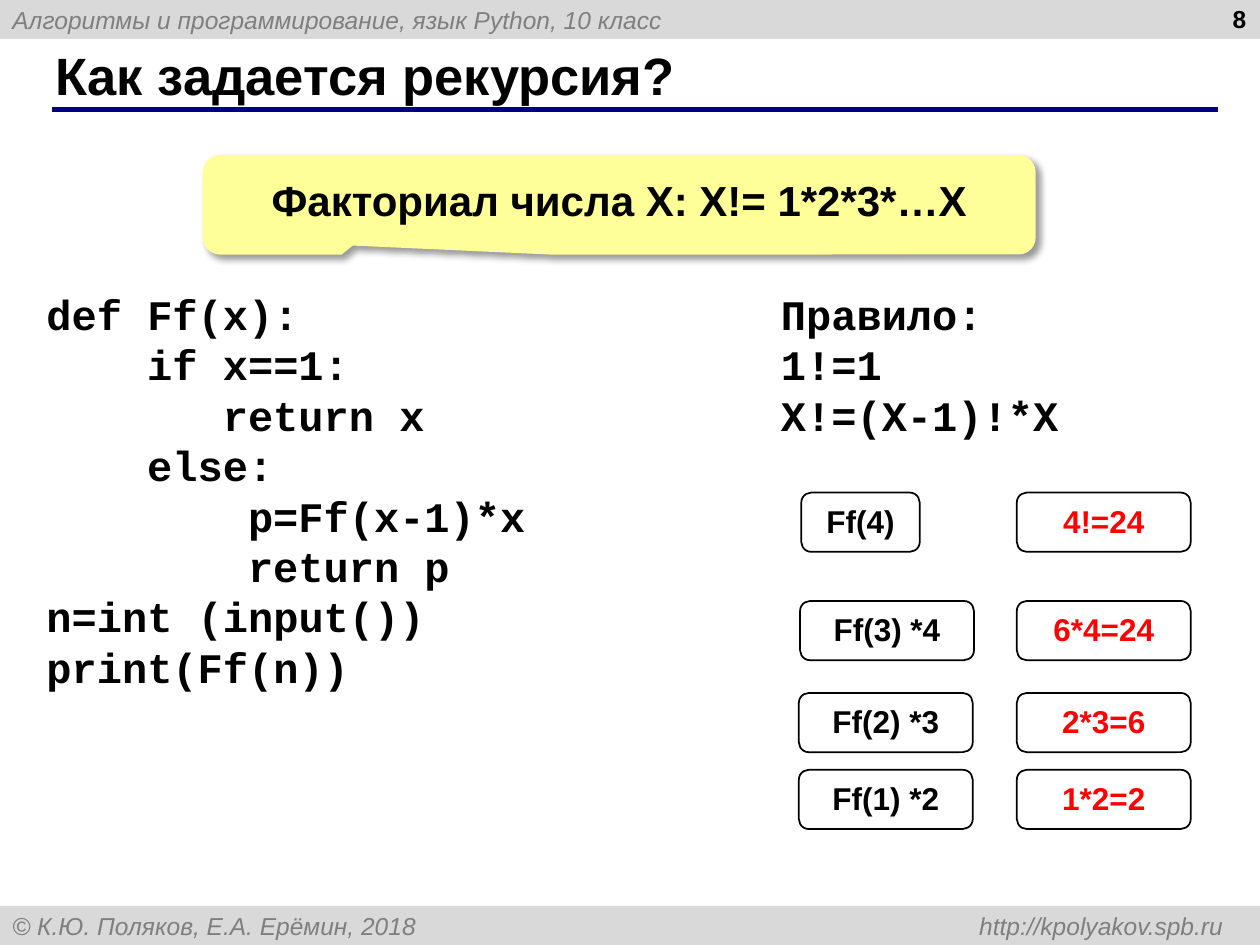
from dataclasses import dataclass

from lxml import etree
from pptx import Presentation
from pptx.dml.color import RGBColor
from pptx.enum.shapes import MSO_CONNECTOR, MSO_SHAPE
from pptx.enum.text import MSO_ANCHOR, PP_ALIGN
from pptx.oxml.ns import qn
from pptx.util import Inches, Pt

RECT = MSO_SHAPE.RECTANGLE
ROUND = MSO_SHAPE.ROUNDED_RECTANGLE
CALLOUT = MSO_SHAPE.ROUNDED_RECTANGULAR_CALLOUT
LINE = MSO_CONNECTOR.STRAIGHT
TOP, MIDDLE = MSO_ANCHOR.TOP, MSO_ANCHOR.MIDDLE
LEFT, CENTER, RIGHT = PP_ALIGN.LEFT, PP_ALIGN.CENTER, PP_ALIGN.RIGHT


@dataclass(frozen=True)
class Theme:
    sans: str = "Arial"
    mono: str = "Courier New"
    black: str = "000000"
    red: str = "FF0000"
    gray: str = "7F7F7F"
    bar: str = "D9D9D9"
    navy: str = "000080"
    yellow: str = "FFFF99"
    small: int = 14
    body: int = 18
    large: int = 24
    title: int = 30


T = Theme()

# Each code line with its indent in characters
CODE = [
    (0, "def Ff(x):"),
    (4, "if x==1:"),
    (7, "return x"),
    (4, "else:"),
    (8, "p=Ff(x-1)*x"),
    (8, "return p"),
    (0, "n=int (input())"),
    (0, "print(Ff(n))"),
]
RULE = [(0, "Правило:"), (0, "1!=1"), (0, "X!=(X-1)!*X")]

# Top, left and width of the call, its text, and the result
STEPS = [
    (3.91, 6.36, 0.94, "Ff(4)", "4!=24"),
    (4.77, 6.35, 1.38, "Ff(3) *4", "6*4=24"),
    (5.5, 6.34, 1.38, "Ff(2) *3", "2*3=6"),
    (6.11, 6.34, 1.38, "Ff(1) *2", "1*2=2"),
]
CHAR = 0.2  # width of one code character, inches


def color(value):
    return RGBColor.from_string(value)


def write(shape, lines, font=T.sans, size=T.body, ink=T.black, bold=True,
          italic=False, align=LEFT, anchor=TOP, pitch=None):
    """Fill a shape with (indent, text) lines or one string."""
    if isinstance(lines, str):
        lines = [(0, lines)]
    frame = shape.text_frame
    frame.word_wrap = True
    frame.vertical_anchor = anchor
    for i, (indent, text) in enumerate(lines):
        para = frame.add_paragraph() if i else frame.paragraphs[0]
        para.alignment = align
        if pitch:
            para.line_spacing = pitch
        if indent:
            props = para._p.get_or_add_pPr()
            props.set("marL", str(Inches(indent * CHAR)))
            props.set("indent", "0")
        run = para.add_run()
        run.text = text
        run.font.name = font
        run.font.size = Pt(size)
        run.font.bold = bold
        run.font.italic = italic
        run.font.color.rgb = color(ink)


def label(slide, box, lines, **style):
    shape = slide.shapes.add_textbox(*map(Inches, box))
    write(shape, lines, **style)


def panel(slide, kind, box, text, fill=None, line=None, **style):
    shape = slide.shapes.add_shape(kind, *map(Inches, box))
    shape.shadow.inherit = False
    if fill:
        shape.fill.solid()
        shape.fill.fore_color.rgb = color(fill)
    else:
        shape.fill.background()
    if line:
        shape.line.color.rgb = color(line)
        shape.line.width = Pt(1)
    else:
        shape.line.fill.background()
    write(shape, text, **style)
    return shape


def rule(slide, left, right, top):
    line = slide.shapes.add_connector(
        LINE, Inches(left), Inches(top), Inches(right), Inches(top))
    line.line.color.rgb = color(T.navy)
    line.line.width = Pt(3)
    etree.SubElement(line._element.spPr, qn("a:effectLst"))


def tab(shape, place):
    props = shape.text_frame.paragraphs[0]._p.get_or_add_pPr()
    tabs = etree.SubElement(props, qn("a:tabLst"))
    etree.SubElement(tabs, qn("a:tab"), pos=str(Inches(place)), algn="r")


def shade(shape):
    effects = shape._element.spPr.find(qn("a:effectLst"))
    outer = etree.SubElement(
        effects, qn("a:outerShdw"), blurRad=str(Pt(4)), dist=str(Pt(3)),
        dir=str(45 * 60000), algn="tl", rotWithShape="0")
    tint = etree.SubElement(outer, qn("a:srgbClr"), val=T.black)
    etree.SubElement(tint, qn("a:alpha"), val="40000")


def frame(slide):
    """Header, footer, title and page number."""
    style = dict(fill=T.bar, size=T.small, ink=T.gray, bold=False,
                 italic=True, anchor=MIDDLE)
    panel(slide, RECT, (0, 0, 10, 0.31),
          "Алгоритмы и программирование, язык Python, 10 класс", **style)
    foot = panel(slide, RECT, (0, 7.19, 10, 0.31),
                 "© К.Ю. Поляков, Е.А. Ерёмин, 2018\thttp://kpolyakov.spb.ru",
                 **style)
    tab(foot, 9.61)
    rule(slide, 0.41, 9.67, 0.87)
    label(slide, (0.34, 0.33, 9.16, 0.52), "Как задается рекурсия?",
          size=T.title, anchor=MIDDLE)
    label(slide, (7.66, -0.02, 2.33, 0.52), "8", size=T.small, align=RIGHT)


def banner(slide):
    shape = panel(slide, CALLOUT, (1.61, 1.23, 6.61, 0.79),
                  "Факториал числа Х: Х!= 1*2*3*…Х", fill=T.yellow,
                  size=T.large, align=CENTER, anchor=MIDDLE, pitch=0.8)
    for i, value in enumerate((-0.32, 0.41, 0.17)):
        shape.adjustments[i] = value
    text = shape.text_frame
    text.margin_left = text.margin_right = 0
    text.margin_top = text.margin_bottom = 0
    shade(shape)


def main():
    deck = Presentation()
    deck.slide_width, deck.slide_height = Inches(10), Inches(7.5)
    slide = deck.slides.add_slide(deck.slide_layouts[6])
    frame(slide)
    banner(slide)

    # Code and the rule behind it
    code = dict(font=T.mono, size=T.large, pitch=Pt(28.8))
    label(slide, (0.27, 2.24, 5.59, 3.74), CODE, **code)
    label(slide, (6.1, 2.24, 3.54, 1.31), RULE, **code)

    # Calls on the left, results on the right
    for top, left, width, call, result in STEPS:
        panel(slide, ROUND, (left, top, width, 0.47), call,
              line=T.black, align=CENTER)
        panel(slide, ROUND, (8.07, top, 1.38, 0.47), result,
              line=T.black, ink=T.red, align=CENTER)

    deck.save("out.pptx")


if __name__ == "__main__":
    main()
